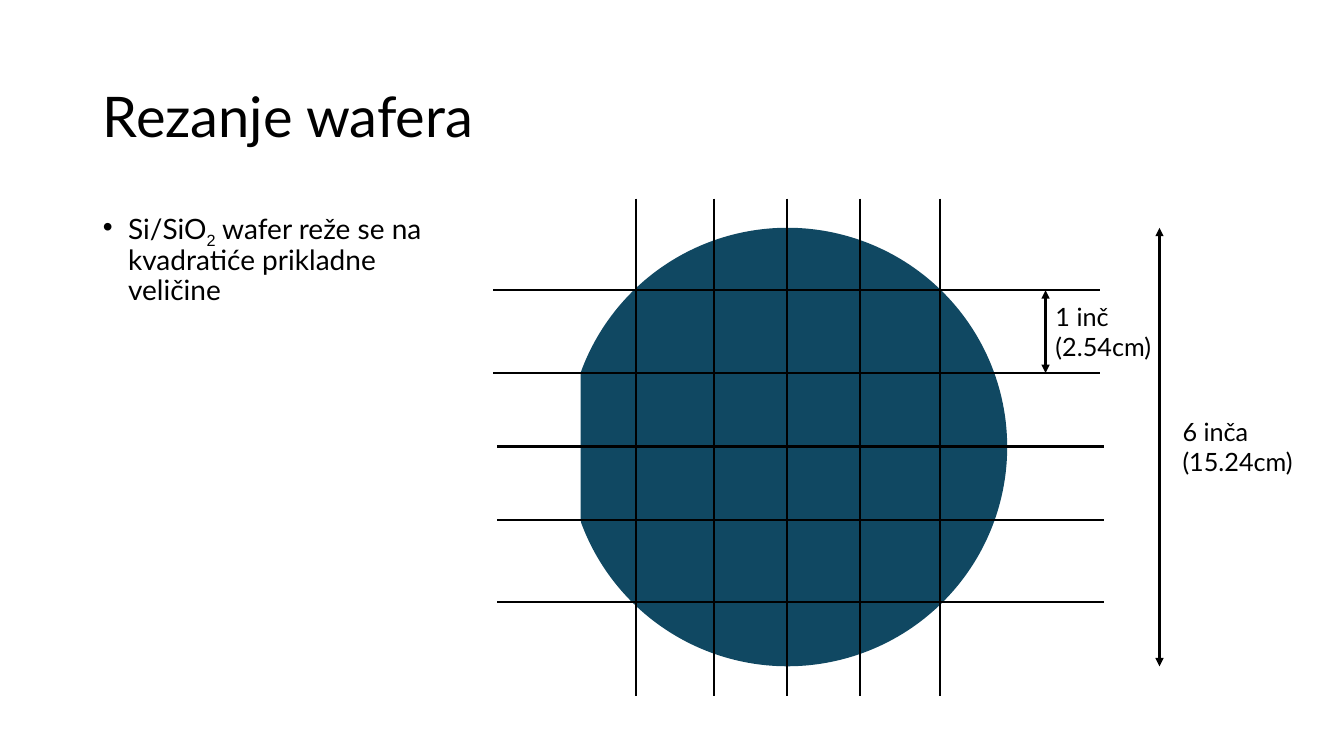
from lxml import etree
from pptx import Presentation, util as u
from pptx.dml.color import RGBColor
from pptx.enum import shapes, text
from pptx.oxml.ns import qn

BLACK, WHITE, WAFER = "000000", "FFFFFF", "104862"


def color(value):
    return RGBColor.from_string(value)


def add_text(p, content, size=18, font="Lato", fill=BLACK, baseline=None):
    r = p.add_run()
    r.text = content
    r.font.size = u.Pt(size)
    r.font.name = font
    r.font.color.rgb = color(fill)
    if baseline is not None:
        r._r.get_or_add_rPr().set("baseline", str(baseline * 1000))


class WaferSlide:
    """Holds the style and the current slide, and draws each kind of element."""

    def __init__(self, prs, line_width=1.5):
        self.s = prs.slides.add_slide(prs.slide_layouts[1])
        self.s.background.fill.solid()
        self.s.background.fill.fore_color.rgb = color(WHITE)
        self.line_width = u.Pt(line_width)

    def placeholder(self, index, box, anchor):
        sp = self.s.placeholders[index]
        sp.left, sp.top, sp.width, sp.height = map(u.Inches, box)
        tf = sp.text_frame
        tf.word_wrap = True
        tf.auto_size = text.MSO_AUTO_SIZE.NONE
        tf.vertical_anchor = anchor
        p = tf.paragraphs[0]
        p.alignment = text.PP_ALIGN.LEFT
        p.line_spacing = 0.9
        return p

    def title(self, content, box):
        p = self.placeholder(0, box, text.MSO_ANCHOR.MIDDLE)
        add_text(p, content, size=40)

    def bullet(self, runs, box):
        p = self.placeholder(1, box, text.MSO_ANCHOR.TOP)
        p.space_before = u.Pt(10)
        pPr = p._p.get_or_add_pPr()
        pPr.set("marL", str(u.Inches(0.25)))
        pPr.set("indent", str(u.Inches(-0.25)))
        etree.SubElement(pPr, qn("a:buFont"), typeface="Arial")
        etree.SubElement(pPr, qn("a:buChar"), char="•")
        for content, style in runs:
            add_text(p, content, size=20, **style)

    def shape(self, kind, box, fill):
        sp = self.s.shapes.add_shape(kind, *map(u.Inches, box))
        sp.shadow.inherit = False
        sp.fill.solid()
        sp.fill.fore_color.rgb = color(fill)
        sp.line.fill.background()

    def line(self, x1, y1, x2, y2, arrows=False):
        cn = self.s.shapes.add_connector(
            shapes.MSO_CONNECTOR.STRAIGHT, *map(u.Inches, (x1, y1, x2, y2)))
        cn.line.width = self.line_width
        cn.line.color.rgb = color(BLACK)
        if arrows:
            ln = cn.line._get_or_add_ln()
            for end in ("a:headEnd", "a:tailEnd"):
                etree.SubElement(ln, qn(end), type="triangle")
        etree.SubElement(cn._element.spPr, qn("a:effectLst"))

    def label(self, content, box):
        tf = self.s.shapes.add_textbox(*map(u.Inches, box)).text_frame
        tf.word_wrap = True
        tf.auto_size = text.MSO_AUTO_SIZE.SHAPE_TO_FIT_TEXT
        add_text(tf.paragraphs[0], content)

    def horizontal_cuts(self, cuts, length=6.02):
        for x, y in cuts:
            self.line(x, y, x + length, y)


def main():
    prs = Presentation()
    prs.slide_width, prs.slide_height = u.Inches(13.33), u.Inches(7.5)
    slide = WaferSlide(prs)

    slide.title("Rezanje wafera", (0.92, 0.46, 11.5, 1.45))
    slide.bullet([("Si/SiO", {}),
                  ("2", {"font": "Arial", "baseline": -25}),
                  (" wafer reže se na kvadratiće prikladne veličine", {})],
                 (0.92, 2.05, 3.51, 4.76))

    slide.shape(shapes.MSO_SHAPE.OVAL, (5.63, 2.26, 4.36, 4.35), WAFER)
    slide.horizontal_cuts([(4.89, 2.88), (4.93, 5.97)])
    for x in (6.31, 7.08, 7.81, 8.53, 9.32):
        slide.line(x, 1.97, x, 6.9)

    slide.line(11.5, 2.26, 11.5, 6.61, arrows=True)
    slide.label("6 inča (15.24cm)", (11.63, 4.08, 1.41, 0.71))
    slide.line(10.37, 2.88, 10.37, 3.7, arrows=True)
    slide.label("1 inč (2.54cm)", (10.37, 2.94, 1.41, 0.71))

    slide.shape(shapes.MSO_SHAPE.RECTANGLE, (5.09, 3.42, 0.67, 2.14), WHITE)
    slide.horizontal_cuts([(4.89, 3.7), (4.93, 4.43), (4.93, 5.16)])

    prs.save("out.pptx")


if __name__ == "__main__":
    main()
